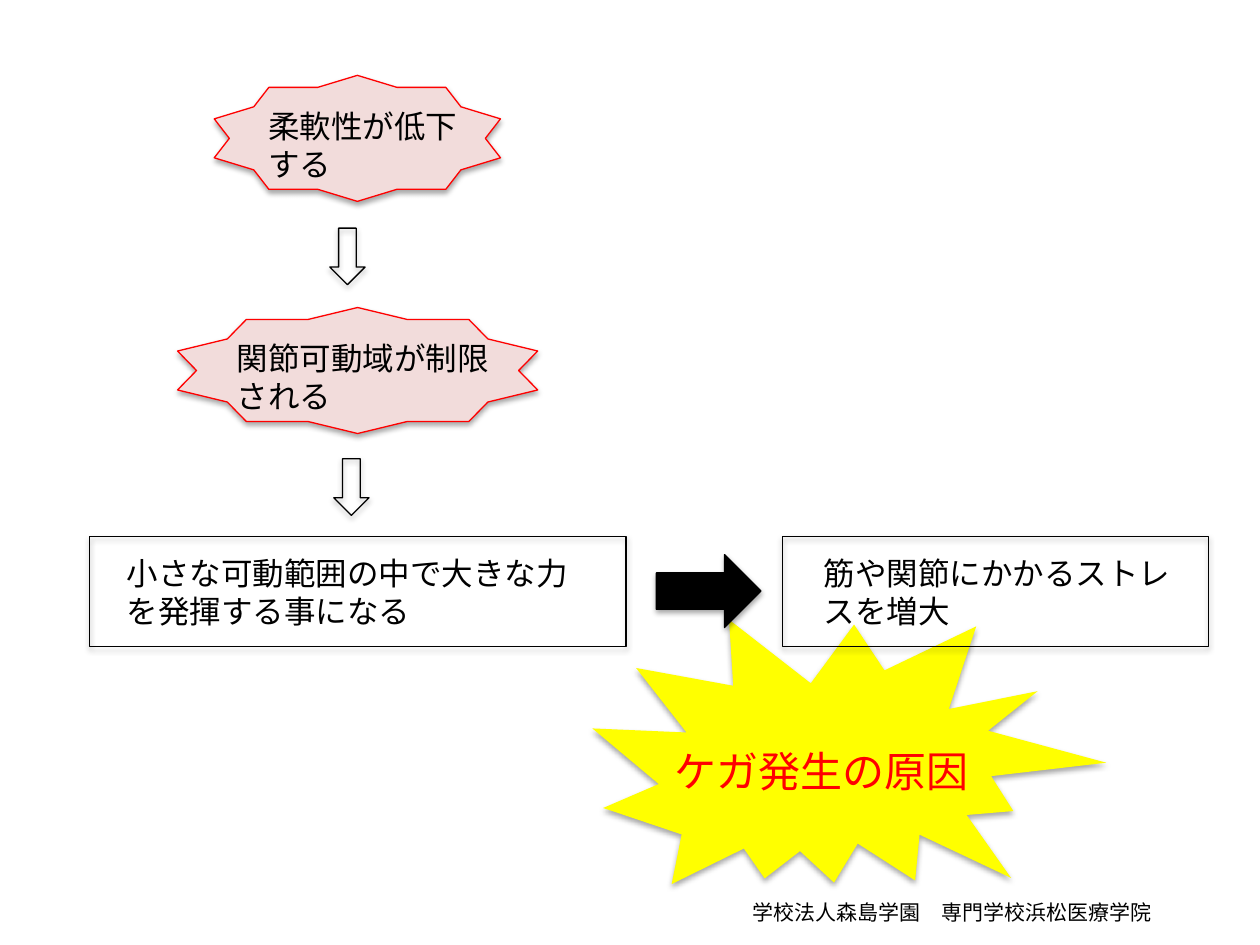
from lxml import etree
from pptx import Presentation
from pptx import util as u
from pptx.dml.color import RGBColor
from pptx.enum import shapes, text
from pptx.oxml import ns

BLACK = RGBColor(0x00, 0x00, 0x00)
RED = RGBColor(0xFF, 0x00, 0x00)
YELLOW = RGBColor(0xFF, 0xFF, 0x00)
PINK = RGBColor(0xF2, 0xDC, 0xDB)
KIND = shapes.MSO_SHAPE
ALIGN = text.PP_ALIGN


class Diagram:
    font = "Calibri"
    line_width = u.Pt(0.75)
    body_size = 18
    shadow = {"blurRad": "40000", "dist": "23000", "dir": "5400000", "rotWithShape": "0"}
    shadow_alpha = "35000"

    def __init__(self, slide):
        self.slide = slide

    def add_shadow(self, sp):
        sp.shadow.inherit = False
        effects = sp._element.spPr.find(ns.qn("a:effectLst"))
        outer = etree.SubElement(effects, ns.qn("a:outerShdw"), self.shadow)
        color = etree.SubElement(outer, ns.qn("a:srgbClr"), val=str(BLACK))
        etree.SubElement(color, ns.qn("a:alpha"), val=self.shadow_alpha)

    def shape(self, kind, box, fill=None, line=BLACK, rotation=0, parent=None):
        """Draw a preset shape; fill or line None means there is none."""
        parent = parent or self.slide
        sp = parent.shapes.add_shape(kind, *map(u.Cm, box))
        sp.rotation = rotation
        if fill is None:
            sp.fill.background()
        else:
            sp.fill.solid()
            sp.fill.fore_color.rgb = fill
        if line is None:
            sp.line.fill.background()
        else:
            sp.line.color.rgb = line
            sp.line.width = self.line_width
        self.add_shadow(sp)
        return sp

    def label(self, words, box, size=body_size, color=BLACK, align=ALIGN.LEFT, parent=None):
        parent = parent or self.slide
        sp = parent.shapes.add_textbox(*map(u.Cm, box))
        tf = sp.text_frame
        tf.word_wrap = True
        p = tf.paragraphs[0]
        p.alignment = align
        r = p.add_run()
        r.text = words
        for name, value in {"name": self.font, "size": u.Pt(size)}.items():
            setattr(r.font, name, value)
        r.font.color.rgb = color

    def group(self):
        return self.slide.shapes.add_group_shape()

    def star(self, words, box, label_box):
        g = self.group()
        self.shape(KIND.STAR_10_POINT, box, PINK, RED, parent=g)
        self.label(words, label_box, parent=g)

    def frame(self, words, left, width, label_left, label_width):
        """Put a label in an outlined box of the bottom row."""
        g = self.group()
        self.label(words, (label_left, 11.05, label_width, 1.8), parent=g)
        self.shape(KIND.RECTANGLE, (left, 10.82, width, 2.21), parent=g)

    def burst(self, words, box, label_box):
        g = self.group()
        self.shape(KIND.EXPLOSION2, box, YELLOW, None, 14.3, g)
        self.label(words, label_box, 24, RED, ALIGN.CENTER, g)

    def down_arrow(self, left, top):
        self.shape(KIND.DOWN_ARROW, (left, top, 0.71, 1.14))


def main():
    prs = Presentation()
    prs.slide_width, prs.slide_height = u.Cm(25.4), u.Cm(19.05)
    s = prs.slides.add_slide(prs.slide_layouts[6])
    d = Diagram(s)

    d.label("学校法人森島学園　専門学校浜松医療学院", (14.43, 18.01, 9.04, 0.76),
            size=12, align=ALIGN.RIGHT)
    d.burst("ケガ発生の原因", (11.94, 12.06, 10.21, 6.55), (11.2, 14.91, 10.74, 1.27))
    d.star("柔軟性が低下する", (4.32, 1.52, 5.77, 2.54), (5.16, 2.03, 4.47, 2.57))
    d.star("関節可動域が制限される", (3.58, 6.2, 7.26, 2.54), (4.52, 6.71, 5.89, 1.8))
    d.frame("小さな可動範囲の中で大きな力を発揮する事になる", 1.8, 10.82, 2.31, 9.68)
    d.frame("筋や関節にかかるストレスを増大", 15.77, 8.59, 16.36, 8)
    d.shape(KIND.LEFT_ARROW, (13.23, 11.18, 2.11, 1.47), BLACK, rotation=180)
    d.down_arrow(6.65, 4.6)
    d.down_arrow(6.73, 9.25)

    prs.save("out.pptx")


if __name__ == "__main__":
    main()
